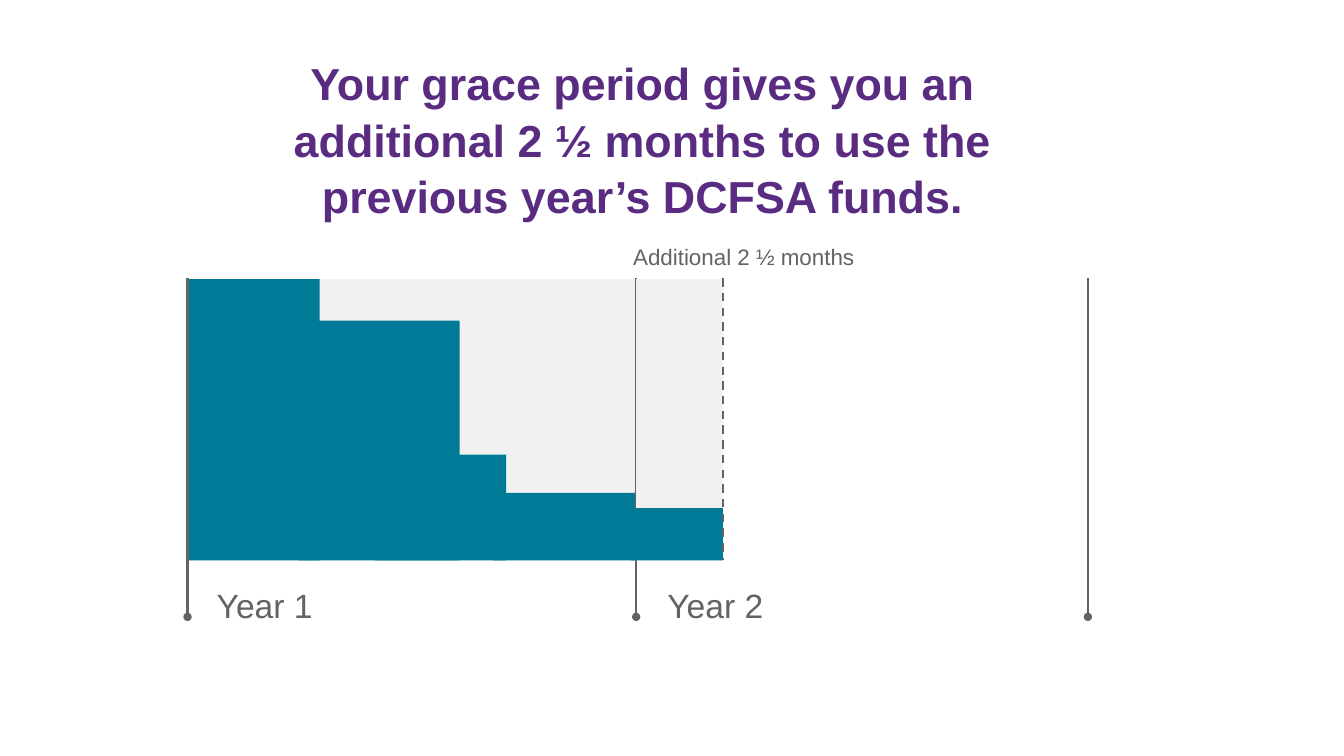
from dataclasses import dataclass

from lxml import etree
from pptx import Presentation
from pptx.dml.color import RGBColor
from pptx.enum.dml import MSO_LINE
from pptx.enum.shapes import MSO_CONNECTOR, MSO_SHAPE
from pptx.enum.text import MSO_ANCHOR, PP_ALIGN
from pptx.oxml.ns import qn
from pptx.slide import Slide
from pptx.util import Inches, Pt

RECT = MSO_SHAPE.RECTANGLE
PLATE = MSO_SHAPE.PENTAGON
STRAIGHT = MSO_CONNECTOR.STRAIGHT
DASH = MSO_LINE.DASH
LEFT, CENTER = PP_ALIGN.LEFT, PP_ALIGN.CENTER
TOP = MSO_ANCHOR.TOP

PURPLE, TEAL, GRAY, PALE = "592C82", "007A96", "626362", "F1F1F2"
BASE = 5.56
CEIL = 2.77


@dataclass
class Block:
    left: float
    top: float
    width: float
    fill: str = TEAL


@dataclass
class Rule:
    x: float
    end: float = 6.12
    dashed: bool = False


@dataclass
class Label:
    text: str
    left: float
    top: float
    width: float
    height: float
    size: int = 24
    color: str = GRAY
    inset: float = 0.13
    bold: bool = False
    align: PP_ALIGN = LEFT


ITEMS = [
    Label(
        "Your grace period gives you an additional 2 ½ months "
        "to use the previous year’s DCFSA funds.",
        1.96, 0.43, 8.83, 1.82, 32, PURPLE, 0.1, True, CENTER,
    ),
    Block(1.84, CEIL, 4.48, PALE),
    Label("Year 1", 2.02, 5.65, 4.36, 0.67),
    Block(1.87, CEIL, 1.3),
    Block(2.96, 3.18, 1.6),
    Block(3.72, 4.51, 1.3),
    Block(4.89, 4.89, 1.42),
    Rule(1.86),
    Rule(6.31),
    Block(6.31, CEIL, 0.86, PALE),
    Label("Year 2", 6.49, 5.65, 4, 0.67),
    Block(6.26, 5.04, 0.91),
    Rule(7.17, BASE, True),
    Rule(10.79),
    Label("Additional 2 ½ months", 6.15, 2.27, 3.42, 0.54, 16),
]


def color(code: str) -> RGBColor:
    return RGBColor.from_string(code)


def draw_block(slide: Slide, block: Block) -> None:
    kind = PLATE if block.fill == PALE else RECT
    shape = slide.shapes.add_shape(
        kind, Inches(block.left), Inches(block.top),
        Inches(block.width), Inches(BASE - block.top),
    )
    if kind == PLATE:
        shape.adjustments[0] = 0
    shape.shadow.inherit = False
    shape.fill.solid()
    shape.fill.fore_color.rgb = color(block.fill)
    shape.line.fill.background()


def draw_rule(slide: Slide, rule: Rule) -> None:
    x = Inches(rule.x)
    edge = slide.shapes.add_connector(
        STRAIGHT, x, Inches(2.76), x, Inches(rule.end)
    )
    edge.line.color.rgb = color(GRAY)
    edge.line.width = Pt(1.5)
    if rule.dashed:
        edge.line.dash_style = DASH
    else:
        line = edge.line._get_or_add_ln()
        etree.SubElement(line, qn("a:tailEnd"), type="oval")
    etree.SubElement(edge._element.spPr, qn("a:effectLst"))


def draw_label(slide: Slide, label: Label) -> None:
    box = slide.shapes.add_textbox(
        Inches(label.left), Inches(label.top),
        Inches(label.width), Inches(label.height),
    )
    frame = box.text_frame
    frame.word_wrap = True
    frame.vertical_anchor = TOP
    frame.margin_left = frame.margin_right = Inches(label.inset)
    frame.margin_top = frame.margin_bottom = Inches(label.inset)
    para = frame.paragraphs[0]
    para.alignment = label.align
    para.line_spacing = 1.05
    run = para.add_run()
    run.text = label.text
    run.font.name = "Arial"
    run.font.size = Pt(label.size)
    run.font.bold = label.bold
    run.font.color.rgb = color(label.color)


def main() -> None:
    deck = Presentation()
    deck.slide_width = Inches(13.33)
    deck.slide_height = Inches(7.5)
    slide = deck.slides.add_slide(deck.slide_layouts[6])
    draw = {Block: draw_block, Rule: draw_rule, Label: draw_label}
    for item in ITEMS:
        draw[type(item)](slide, item)
    deck.save("out.pptx")


if __name__ == "__main__":
    main()
